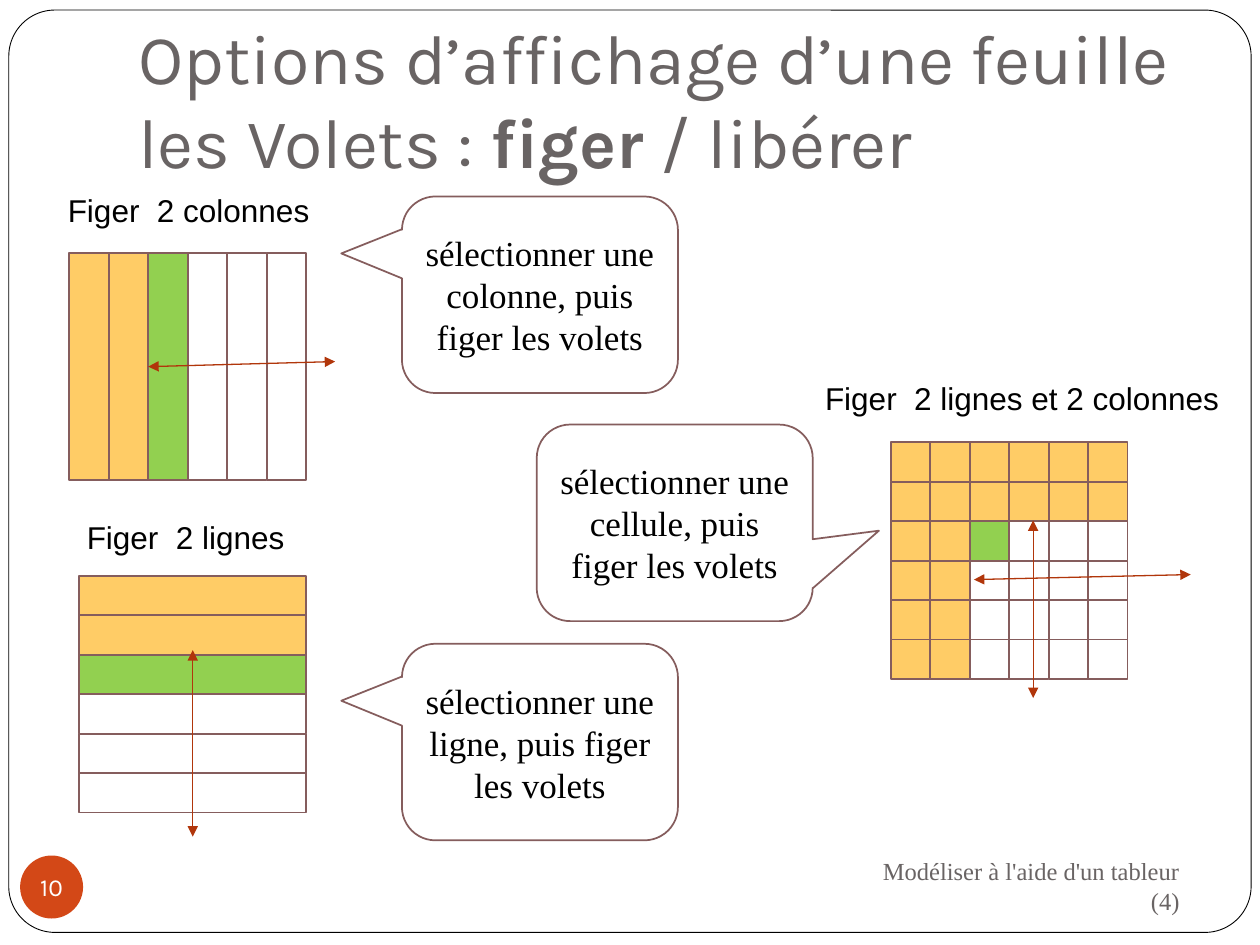
from lxml import etree
from pptx import Presentation
from pptx.dml.color import RGBColor
from pptx.enum.shapes import MSO_CONNECTOR, MSO_SHAPE
from pptx.enum.text import MSO_ANCHOR, PP_ALIGN
from pptx.oxml.ns import qn
from pptx.util import Inches, Pt

RECTANGLE = MSO_SHAPE.RECTANGLE
ROUNDED = MSO_SHAPE.ROUNDED_RECTANGLE
OVAL = MSO_SHAPE.OVAL
CALLOUT = MSO_SHAPE.ROUNDED_RECTANGULAR_CALLOUT
STRAIGHT = MSO_CONNECTOR.STRAIGHT
LEFT, CENTER, RIGHT = PP_ALIGN.LEFT, PP_ALIGN.CENTER, PP_ALIGN.RIGHT
TOP, MIDDLE, BOTTOM = MSO_ANCHOR.TOP, MSO_ANCHOR.MIDDLE, MSO_ANCHOR.BOTTOM

COLORS = {
    "white": "FFFFFF",
    "black": "000000",
    "gray": "696464",
    "badge": "D34817",
    "frozen": "FFCC66",
    "selected": "92D050",
    "border": "855D5D",
    "arrow": "B1360B",
}
COUNT = 6
FROZEN = 2
CELL = 1.88 / COUNT
BAND = 1.8


def write(frame, text, font="Arial", size=18, color="black", bold=False,
          align=LEFT, anchor=TOP, wrap=True):
    frame.word_wrap = wrap
    frame.vertical_anchor = anchor
    paragraph = frame.paragraphs[0]
    paragraph.alignment = align
    for index, line in enumerate(text.split("\n")):
        if index:
            paragraph.add_line_break()
        run = paragraph.add_run()
        run.text = line
        run.font.name = font
        run.font.size = Pt(size)
        run.font.bold = bold
        run.font.color.rgb = RGBColor.from_string(COLORS[color])


def draw(kind, left, top, width, height, fill="white", line="border", weight=1):
    shape = slide.shapes.add_shape(
        kind, Inches(left), Inches(top), Inches(width), Inches(height))
    shape.shadow.inherit = False
    shape.fill.solid()
    shape.fill.fore_color.rgb = RGBColor.from_string(COLORS[fill])
    if line:
        shape.line.color.rgb = RGBColor.from_string(COLORS[line])
        shape.line.width = Pt(weight)
    else:
        shape.line.fill.background()
    return shape


deck = Presentation()
deck.slide_width, deck.slide_height = Inches(10), Inches(7.5)
slide = deck.slides.add_slide(deck.slide_layouts[6])

page_frame = draw(ROUNDED, 0.07, 0.08, 9.86, 7.32, line="black", weight=0.5)
page_frame.adjustments[0] = 0.05

title = slide.shapes.add_textbox(
    Inches(1), Inches(0.3), Inches(8.5), Inches(1.25)).text_frame
title.margin_bottom = Inches(0.1)
for part, bold in (
    ("Options d’affichage d’une feuille\nles Volets : ", False),
    ("figer", True),
    (" / libérer", False),
):
    write(title, part, font="Karla", size=40, color="gray", bold=bold, anchor=BOTTOM)

footer = slide.shapes.add_textbox(
    Inches(6.75), Inches(6.77), Inches(2.71), Inches(0.52)).text_frame
write(footer, "Modéliser à l'aide d'un tableur (4)", font="Times New Roman",
      size=14, color="gray", align=RIGHT, anchor=MIDDLE)

page_number = draw(OVAL, 0.16, 6.79, 0.5, 0.5, fill="badge", line=None).text_frame
page_number.margin_left = page_number.margin_right = 0
page_number.margin_top = page_number.margin_bottom = 0
write(page_number, "10", font="Karla", size=14, color="white",
      align=CENTER, anchor=MIDDLE, wrap=False)

band_fills = ["frozen"] * FROZEN + ["selected"] + ["white"] * (COUNT - FROZEN - 1)
columns = [draw(RECTANGLE, 0.55 + i * CELL, 2.01, CELL, BAND, fill)
           for i, fill in enumerate(band_fills)]
for i, fill in enumerate(band_fills):
    draw(RECTANGLE, 0.63, 4.57 + i * CELL, BAND, CELL, fill)

for row in range(COUNT):
    for column in range(COUNT):
        if min(row, column) < FROZEN:
            fill = "frozen"
        elif row == column == FROZEN:
            fill = "selected"
        else:
            fill = "white"
        draw(RECTANGLE, 7.07 + column * CELL, 3.51 + row * CELL, CELL, CELL, fill)

for caption, left, top, width in (
    ("Figer  2 colonnes", 0.44, 1.47, 2.14),
    ("Figer  2 lignes", 0.59, 4.06, 1.79),
    ("Figer  2 lignes et 2 colonnes", 6.45, 2.96, 3.36),
):
    label = slide.shapes.add_textbox(
        Inches(left), Inches(top), Inches(width), Inches(0.4))
    write(label.text_frame, caption, wrap=False)

for x1, y1, x2, y2, selected in (
    (1.17, 2.91, 2.66, 2.87, columns[FROZEN]),
    (1.53, 5.16, 1.53, 6.64, None),
    (7.73, 4.6, 9.45, 4.56, None),
    (8.2, 4.13, 8.2, 5.54, None),
):
    arrow = slide.shapes.add_connector(
        STRAIGHT, Inches(x1), Inches(y1), Inches(x2), Inches(y2))
    if selected:
        arrow.begin_connect(selected, 1)
    arrow.line.color.rgb = RGBColor.from_string(COLORS["arrow"])
    arrow.line.width = Pt(0.75)
    stroke = arrow.line._get_or_add_ln()
    for end in ("a:headEnd", "a:tailEnd"):
        etree.SubElement(stroke, qn(end), type="triangle")
    etree.SubElement(arrow._element.spPr, qn("a:effectLst"))

for target, left, top, tip_x, tip_y in (
    ("colonne", 3.19, 1.56, -0.72, -0.21),
    ("ligne", 3.19, 5.11, -0.72, -0.21),
    ("cellule", 4.26, 3.37, 0.74, 0.04),
):
    callout = draw(CALLOUT, left, top, 2.19, 1.56)
    callout.adjustments[0] = tip_x
    callout.adjustments[1] = tip_y
    callout.adjustments[2] = 0.17
    write(callout.text_frame, f"sélectionner une {target}, puis figer les volets",
          font="Times New Roman", size=20, align=CENTER, anchor=MIDDLE)

deck.save("out.pptx")
